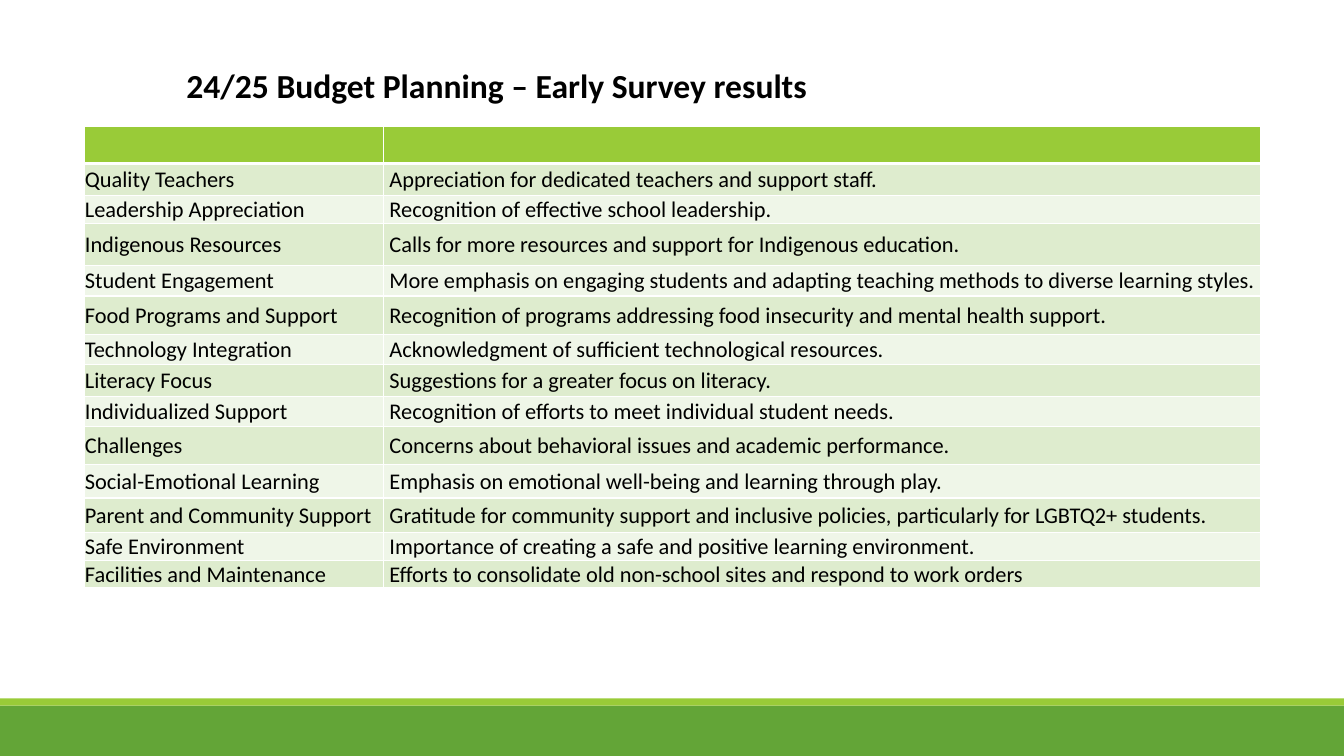
from lxml import etree
from pptx import Presentation
from pptx.dml.color import RGBColor
from pptx.enum.shapes import MSO_SHAPE
from pptx.enum.text import MSO_ANCHOR
from pptx.oxml.ns import qn
from pptx.util import Cm, Pt

RECT = MSO_SHAPE.RECTANGLE
MIDDLE, BOTTOM = MSO_ANCHOR.MIDDLE, MSO_ANCHOR.BOTTOM

COLORS = {
    "lime": "99CB38",
    "green": "63A537",
    "band_dark": "DEECCE",
    "band_light": "EFF6E8",
    "white": "FFFFFF",
    "black": "000000",
}
TITLE_FONT = {"name": "Calibri", "size": Pt(24), "bold": True}
CELL_FONT = {"name": "Calibri", "size": Pt(16), "bold": False}
CELL_MARGINS = {
    "margin_left": Cm(0.02),
    "margin_right": Cm(0.02),
    "margin_top": Cm(0.02),
    "margin_bottom": 0,
}
SECOND_COLUMN_INDENT = Cm(0.15)
COLUMN_SHARES = (0.2545, 0.7455)
HEADER_HEIGHT = 0.93
SURVEY = [
    (0.81, "Quality Teachers", "Appreciation for dedicated teachers and support staff."),
    (0.69, "Leadership Appreciation", "Recognition of effective school leadership."),
    (1.07, "Indigenous Resources", "Calls for more resources and support for Indigenous education."),
    (0.76, "Student Engagement", "More emphasis on engaging students and adapting teaching methods to diverse learning styles."),
    (0.97, "Food Programs and Support", "Recognition of programs addressing food insecurity and mental health support."),
    (0.76, "Technology Integration", "Acknowledgment of sufficient technological resources."),
    (0.81, "Literacy Focus", "Suggestions for a greater focus on literacy."),
    (0.74, "Individualized Support", "Recognition of efforts to meet individual student needs."),
    (0.97, "Challenges", "Concerns about behavioral issues and academic performance."),
    (0.84, "Social-Emotional Learning", "Emphasis on emotional well-being and learning through play."),
    (0.86, "Parent and Community Support", "Gratitude for community support and inclusive policies, particularly for LGBTQ2+ students."),
    (0.71, "Safe Environment", "Importance of creating a safe and positive learning environment."),
    (0.69, "Facilities and Maintenance", "Efforts to consolidate old non-school sites and respond to work orders"),
]


def rgb(name):
    return RGBColor.from_string(COLORS[name])


def set_all(target, values):
    for name, value in values.items():
        setattr(target, name, value)


def style_font(font, values):
    set_all(font, values)
    font.color.rgb = rgb("black")


def add_footer(s, left, top, width, height):
    stripe = Cm(0.18)
    bars = [("green", top + stripe, height - stripe), ("lime", top, stripe)]
    for color, y, h in bars:
        sp = s.shapes.add_shape(RECT, left, y, width, h)
        sp.shadow.inherit = False
        sp.fill.solid()
        sp.fill.fore_color.rgb = rgb(color)
        sp.line.fill.background()


def add_title(s, left, top, width, height):
    tf = s.shapes.add_textbox(left, top, width, height).text_frame
    tf.word_wrap = True
    r = tf.paragraphs[0].add_run()
    r.text = "24/25 Budget Planning – Early Survey results"
    style_font(r.font, TITLE_FONT)


def add_borders(cell, bottom_width):
    tcPr = cell._tc.get_or_add_tcPr()
    for side in "LRTB":
        width = bottom_width if side == "B" else Pt(1)
        ln = etree.SubElement(tcPr, qn(f"a:ln{side}"), w=str(width))
        fill = etree.SubElement(ln, qn("a:solidFill"))
        etree.SubElement(fill, qn("a:srgbClr"), val=COLORS["white"])


def style_cell(cell, color, bottom_width=Pt(1)):
    add_borders(cell, bottom_width)
    cell.fill.solid()
    cell.fill.fore_color.rgb = rgb(color)
    set_all(cell, CELL_MARGINS)
    style_font(cell.text_frame.paragraphs[0].font, CELL_FONT)


def add_survey_table(s, left, top, width):
    heights = [HEADER_HEIGHT] + [row[0] for row in SURVEY]
    frame = s.shapes.add_table(len(heights), 2, left, top, width, Cm(sum(heights)))
    table = frame.table
    for column, share in zip(table.columns, COLUMN_SHARES):
        column.width = int(width * share)
    for row, height in zip(table.rows, heights):
        row.height = Cm(height)
    for cell in table.rows[0].cells:
        style_cell(cell, "lime", Pt(3))
    for i, (_, *texts) in enumerate(SURVEY, 1):
        for j, text in enumerate(texts):
            cell = table.cell(i, j)
            cell.text = text
            style_cell(cell, "band_dark" if i % 2 else "band_light")
            cell.vertical_anchor = BOTTOM if i == len(SURVEY) else MIDDLE
            p = cell.text_frame.paragraphs[0]
            p.space_before = Pt(1)
            style_font(p.runs[0].font, CELL_FONT)
            if j == 1:
                cell.margin_left = SECOND_COLUMN_INDENT


def main():
    prs = Presentation()
    prs.slide_width, prs.slide_height = Cm(33.87), Cm(19.05)
    s = prs.slides.add_slide(prs.slide_layouts[6])
    footer_height = Cm(1.45)
    add_footer(s, 0, prs.slide_height - footer_height, prs.slide_width, footer_height)
    add_title(s, Cm(4.45), Cm(1.52), Cm(16.81), Cm(2.31))
    add_survey_table(s, Cm(2.12), Cm(3.19), Cm(29.65))
    prs.save("out.pptx")


if __name__ == "__main__":
    main()
